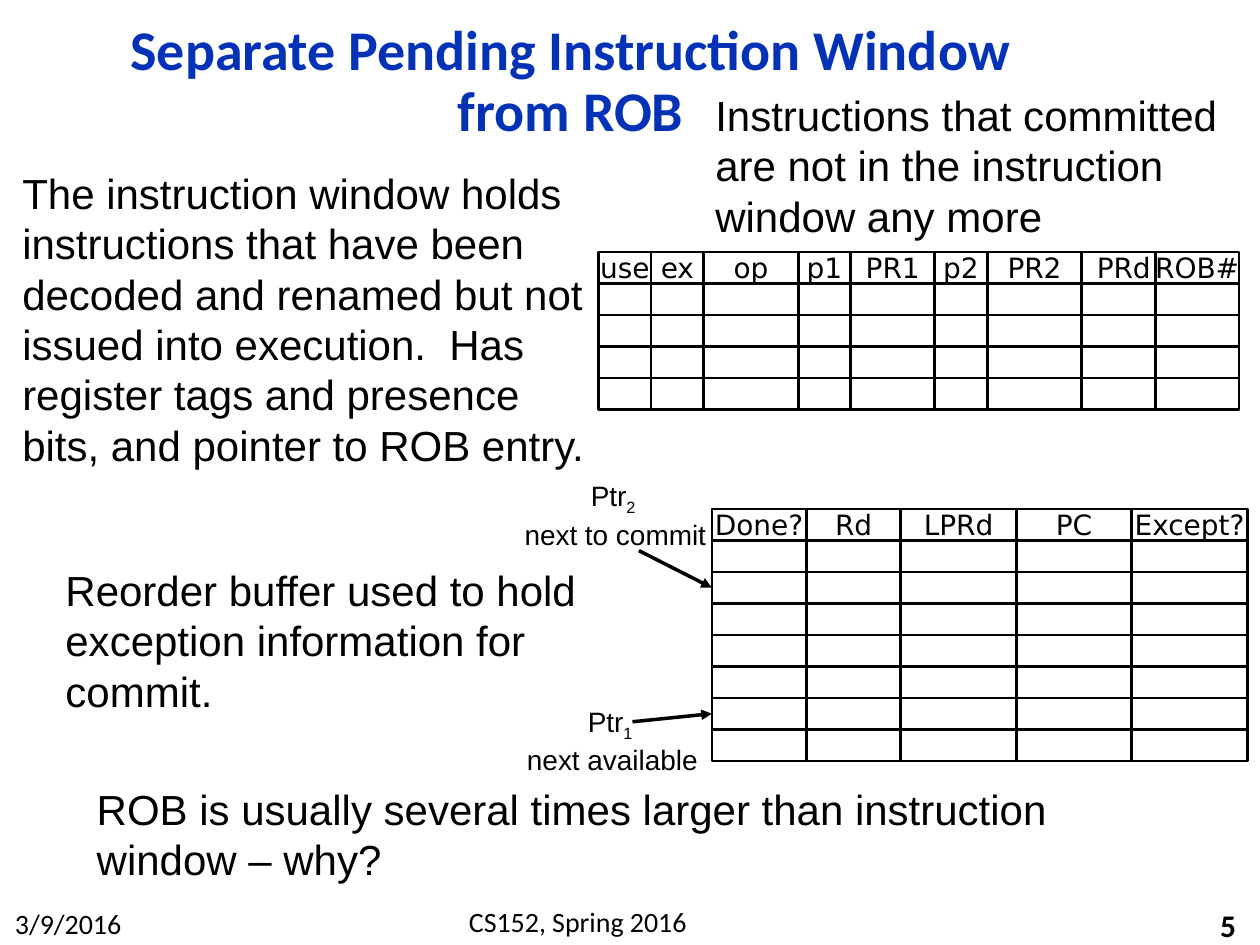
"""Build the slide on separating the pending instruction window from the ROB."""
from dataclasses import dataclass

from lxml import etree
from pptx import Presentation
from pptx.dml.color import RGBColor
from pptx.enum.shapes import MSO_CONNECTOR, MSO_SHAPE
from pptx.enum.text import MSO_ANCHOR, MSO_AUTO_SIZE, PP_ALIGN
from pptx.oxml.ns import qn
from pptx.util import Cm, Pt

RECTANGLE = MSO_SHAPE.RECTANGLE
STRAIGHT = MSO_CONNECTOR.STRAIGHT
MIDDLE = MSO_ANCHOR.MIDDLE
NO_AUTOFIT = MSO_AUTO_SIZE.NONE
LEFT, CENTER, RIGHT = PP_ALIGN.LEFT, PP_ALIGN.CENTER, PP_ALIGN.RIGHT
LEFT_SIDE = 1


@dataclass(frozen=True)
class Theme:
    ink: RGBColor = RGBColor(0x00, 0x00, 0x00)
    paper: RGBColor = RGBColor(0xFF, 0xFF, 0xFF)
    title: RGBColor = RGBColor(0x03, 0x32, 0xB7)
    heading_font: str = "Calibri"
    body_font: str = "Arial"
    cell_font: str = "DejaVu Sans"
    title_size: Pt = Pt(32)
    body_size: Pt = Pt(24)
    number_size: Pt = Pt(18)
    small_size: Pt = Pt(16)
    cell_line: Pt = Pt(1.5)
    arrow_line: Pt = Pt(2)


theme = Theme()


def style(para, name, size, align=LEFT, color=theme.ink, bold=False):
    para.alignment = align
    para.font.name = name
    para.font.size = size
    para.font.bold = bold
    para.font.color.rgb = color


def add_text(left, top, width, height, text, name, size, align=LEFT, bold=False):
    box = page.shapes.add_textbox(Cm(left), Cm(top), Cm(width), Cm(height))
    box.text_frame.word_wrap = True
    para = box.text_frame.paragraphs[0]
    para.text = text
    style(para, name, size, align, bold=bold)
    return box


deck = Presentation()
deck.slide_width, deck.slide_height = Cm(25.4), Cm(19.05)
page = deck.slides.add_slide(deck.slide_layouts[5])

title = page.shapes.title
title.left, title.top, title.width, title.height = Cm(1.37), Cm(0.64), Cm(20.27), Cm(2.06)
title.text_frame.text = "Separate Pending Instruction Window from ROB"
title.text_frame.auto_size = NO_AUTOFIT
title.text_frame.vertical_anchor = MIDDLE
title_para = title.text_frame.paragraphs[0]
title_para.line_spacing = 0.9
style(title_para, theme.heading_font, theme.title_size, CENTER, theme.title, True)

date = add_text(0.03, 18.16, 2.69, 0.94, "3/9/2016", theme.heading_font, theme.small_size, CENTER)
date.text_frame.word_wrap = False
add_text(7.42, 18.11, 8.46, 0.94, "CS152, Spring 2016", theme.heading_font, theme.small_size, CENTER)
number = add_text(19.89, 18.24, 5.28, 0.81, "5", theme.heading_font, theme.number_size, RIGHT, True)
number.text_frame.vertical_anchor = MIDDLE

notes = [
    (1.07, 11.25, 11.2, 3.33, "Reorder buffer used to hold exception information for commit."),
    (0.2, 3.25, 12.01, 7.95,
     "The instruction window holds instructions that have been decoded and renamed but not "
     "issued into execution.  Has register tags and presence bits, and pointer to ROB entry."),
    (1.7, 15.67, 22.02, 2.31, "ROB is usually several times larger than instruction window – why?"),
    (14.17, 1.68, 11.2, 3.33,
     "Instructions that committed are not in the instruction window any more"),
]
for left, top, width, height, text in notes:
    add_text(left, top, width, height, text, theme.body_font, theme.body_size)

UNIT = Cm(2.54) // 12
ROW_HEIGHT = 3 * UNIT
window_columns = [("use", 0, 5), ("ex", 5, 5), ("op", 10, 9), ("p1", 19, 5), ("PR1", 24, 8),
                  ("p2", 32, 5), ("PR2", 37, 9), ("PRd", 46, 8), ("ROB#", 53, 8)]
buffer_columns = [("Done?", 0, 9), ("Rd", 9, 9), ("LPRd", 18, 11), ("PC", 29, 11), ("Except?", 40, 11)]
grids = [
    ("window", Cm(12.07), Cm(5.08), 5, window_columns),
    ("buffer", Cm(14.35), Cm(10.26), 8, buffer_columns),
]
cells = {}
for grid, left, top, row_count, columns in grids:
    for label, start, width in columns:
        for row in range(row_count):
            cell = page.shapes.add_shape(RECTANGLE, left + start * UNIT, top + row * ROW_HEIGHT,
                                         width * UNIT, ROW_HEIGHT)
            cell.shadow.inherit = False
            cell.fill.solid()
            cell.fill.fore_color.rgb = theme.paper
            cell.line.color.rgb = theme.ink
            cell.line.width = theme.cell_line
            cells[grid, label, row] = cell
        header = cells[grid, label, 0].text_frame
        header.text = label
        header.word_wrap = False
        header.vertical_anchor = MIDDLE
        style(header.paragraphs[0], theme.cell_font, theme.small_size, CENTER)

pointers = [
    (10.08, 9.53, 4.65, "2 ", "next to commit", 12.88, 11.1, 2),
    (10.34, 14.07, 4.01, "1 ", "next available", 12.75, 14.55, 6),
]
for left, top, width, index, meaning, start_x, start_y, row in pointers:
    box = add_text(left, top, width, 1.63, "Ptr", theme.body_font, theme.small_size, CENTER)
    para = box.text_frame.paragraphs[0]
    span = para.add_run()
    span.text = index
    span.font._element.set("baseline", "-25000")
    para.add_line_break()
    para.add_run().text = meaning

    target = cells["buffer", "Done?", row]
    arrow = page.shapes.add_connector(STRAIGHT, Cm(start_x), Cm(start_y), target.left, target.top)
    arrow.end_connect(target, LEFT_SIDE)
    arrow.line.color.rgb = theme.ink
    arrow.line.width = theme.arrow_line
    etree.SubElement(arrow.line._get_or_add_ln(), qn("a:tailEnd"), type="triangle")
    etree.SubElement(arrow._element.spPr, qn("a:effectLst"))

deck.save("out.pptx")
